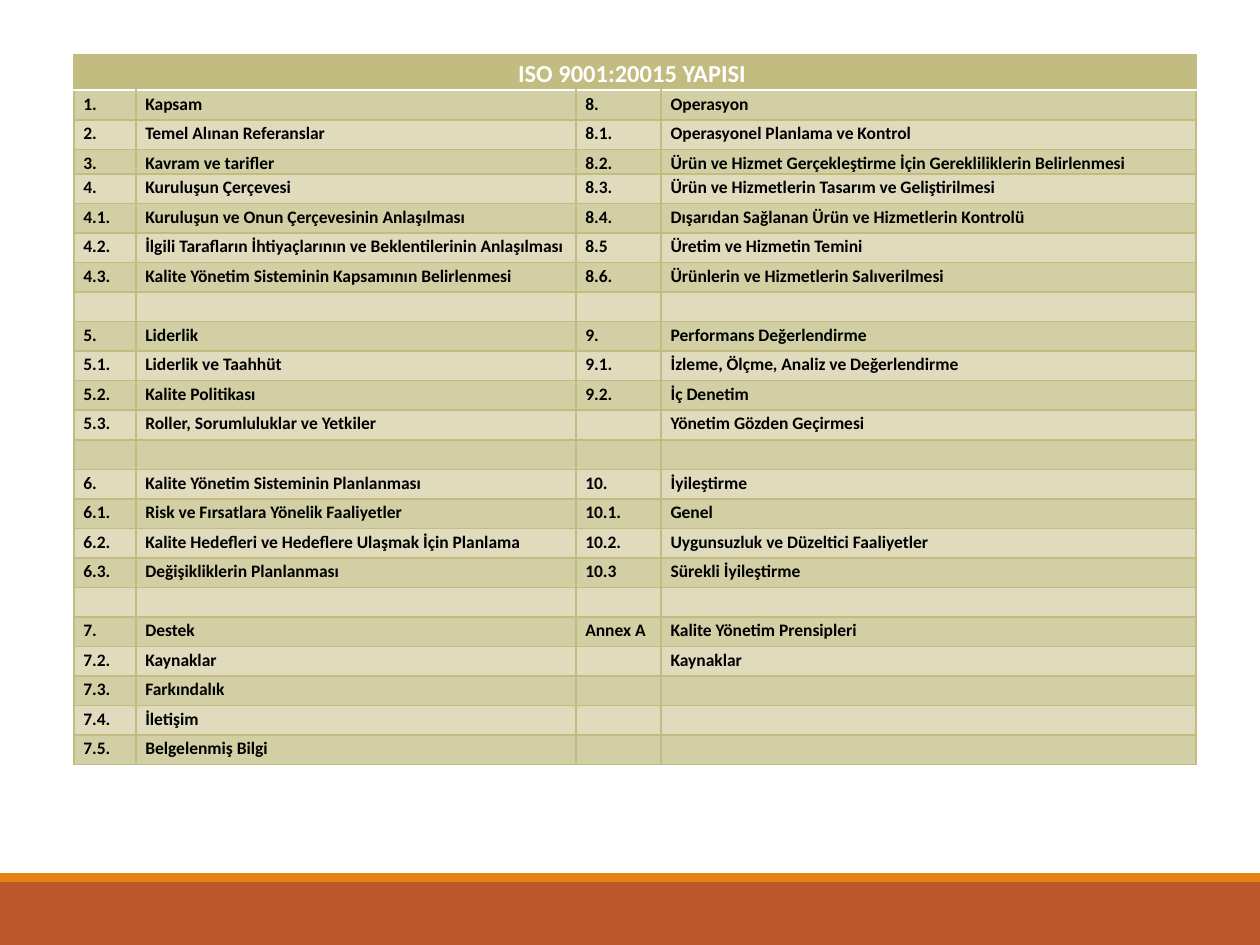
from dataclasses import dataclass

from lxml.etree import SubElement
from pptx import Presentation
from pptx.dml.color import RGBColor
from pptx.enum.shapes import MSO_SHAPE
from pptx.enum.text import PP_ALIGN
from pptx.oxml.ns import qn
from pptx.util import Cm, Pt


@dataclass(frozen=True)
class Theme:
    font: str = "Calibri"
    header_size: int = 14
    body_size: int = 10
    line_spacing: float = 1.15
    khaki: str = "C2BC80"
    dark_band: str = "D3CFA4"
    light_band: str = "E1DBBE"
    white: str = "FFFFFF"
    black: str = "000000"
    orange: str = "E48312"
    rust: str = "BD582C"


HEADING = "ISO 9001:20015 YAPISI "
CLAUSES = [
    ("1.", "Kapsam", "8.", "Operasyon"),
    ("2.", "Temel Alınan Referanslar", "8.1.", "Operasyonel Planlama ve Kontrol"),
    ("3.", "Kavram ve tarifler", "8.2.", "Ürün ve Hizmet Gerçekleştirme İçin Gerekliliklerin Belirlenmesi"),
    ("4.", "Kuruluşun Çerçevesi", "8.3.", "Ürün ve Hizmetlerin Tasarım ve Geliştirilmesi"),
    ("4.1.", "Kuruluşun ve Onun Çerçevesinin Anlaşılması", "8.4.", "Dışarıdan Sağlanan Ürün ve Hizmetlerin Kontrolü"),
    ("4.2.", "İlgili Tarafların İhtiyaçlarının ve Beklentilerinin Anlaşılması", "8.5", "Üretim ve Hizmetin Temini"),
    ("4.3.", "Kalite Yönetim Sisteminin Kapsamının Belirlenmesi", "8.6.", "Ürünlerin ve Hizmetlerin Salıverilmesi"),
    ("", "", "", ""),
    ("5.", "Liderlik", "9.", "Performans Değerlendirme"),
    ("5.1.", "Liderlik ve Taahhüt", "9.1.", "İzleme, Ölçme, Analiz ve Değerlendirme"),
    ("5.2.", "Kalite Politikası", "9.2.", "İç Denetim"),
    ("5.3.", "Roller, Sorumluluklar ve Yetkiler", "", "Yönetim Gözden Geçirmesi"),
    ("", "", "", ""),
    ("6.", "Kalite Yönetim Sisteminin Planlanması", "10.", "İyileştirme"),
    ("6.1.", "Risk ve Fırsatlara Yönelik Faaliyetler", "10.1.", "Genel"),
    ("6.2.", "Kalite Hedefleri ve Hedeflere Ulaşmak İçin Planlama", "10.2.", "Uygunsuzluk ve Düzeltici Faaliyetler"),
    ("6.3.", "Değişikliklerin Planlanması", "10.3", "Sürekli İyileştirme"),
    ("", "", "", ""),
    ("7.", "Destek", "Annex A", "Kalite Yönetim Prensipleri"),
    ("7.2.", "Kaynaklar", "", "Kaynaklar"),
    ("7.3.", "Farkındalık", "", ""),
    ("7.4.", "İletişim", "", ""),
    ("7.5.", "Belgelenmiş Bilgi", "", ""),
]
COLUMN_WIDTHS = (1.25, 8.87, 1.72, 10.78)
HEADER_HEIGHT = 0.71
SHORT_ROW = 3
SHORT_HEIGHT = 0.5
OTHER_ROWS_HEIGHT = 13.11


def write_text(paragraph, text, *, font, size, color, spacing, align=PP_ALIGN.LEFT):
    paragraph.alignment = align
    paragraph.line_spacing = spacing
    if not text:
        paragraph._p.get_or_add_endParaRPr().set("sz", str(size * 100))
        return
    span = paragraph.add_run()
    span.text = text
    span.font.name = font
    span.font.size = Pt(size)
    span.font.bold = True
    span.font.color.rgb = RGBColor.from_string(color)


class SlideBuilder:
    def __init__(self, page, theme):
        self.page = page
        self.theme = theme

    def band(self, left, top, width, height, color):
        box = self.page.shapes.add_shape(
            MSO_SHAPE.RECTANGLE, Cm(left), Cm(top), Cm(width), Cm(height)
        )
        box.shadow.inherit = False
        box.fill.solid()
        box.fill.fore_color.rgb = RGBColor.from_string(color)
        box.line.fill.background()

    def border(self, cell, side, color, width):
        line = SubElement(cell._tc.get_or_add_tcPr(), qn(f"a:ln{side}"), w=str(Pt(width)))
        fill = SubElement(line, qn("a:solidFill"))
        SubElement(fill, qn("a:srgbClr"), val=color)

    def cell(self, cell, text, fill, **borders):
        for side in "LRTB":
            self.border(cell, side, *borders.get(side, (self.theme.khaki, 1)))
        cell.fill.solid()
        cell.fill.fore_color.rgb = RGBColor.from_string(fill)
        cell.margin_left = cell.margin_right = Cm(0.19)
        cell.margin_top = cell.margin_bottom = 0
        if text is not None:
            is_header = fill == self.theme.khaki
            write_text(
                cell.text_frame.paragraphs[0],
                text,
                font=self.theme.font,
                size=self.theme.header_size if is_header else self.theme.body_size,
                color=self.theme.white if is_header else self.theme.black,
                spacing=self.theme.line_spacing,
                align=PP_ALIGN.CENTER if is_header else PP_ALIGN.LEFT,
            )

    def clause_table(self, left, top, heading, clauses):
        theme = self.theme
        row_height = OTHER_ROWS_HEIGHT / (len(clauses) - 1)
        heights = [HEADER_HEIGHT] + [row_height] * len(clauses)
        heights[SHORT_ROW] = SHORT_HEIGHT
        table = self.page.shapes.add_table(
            len(heights), len(COLUMN_WIDTHS), Cm(left), Cm(top),
            Cm(sum(COLUMN_WIDTHS)), Cm(sum(heights)),
        ).table
        for column, width in zip(table.columns, COLUMN_WIDTHS):
            column.width = Cm(width)
        for row, height in zip(table.rows, heights):
            row.height = Cm(height)

        divider = (theme.white, 1.25)
        table.cell(0, 0).merge(table.cell(0, len(COLUMN_WIDTHS) - 1))
        for index, cell in enumerate(table.rows[0].cells):
            self.cell(cell, None if index else heading, theme.khaki, B=divider)
        for number, clause in enumerate(clauses, start=1):
            fill = theme.dark_band if number % 2 else theme.light_band
            borders = {"T": divider} if number == 1 else {}
            for cell, text in zip(table.rows[number].cells, clause):
                self.cell(cell, text, fill, **borders)


def main():
    deck = Presentation()
    deck.slide_width, deck.slide_height = Cm(25.4), Cm(19.05)
    theme = Theme()
    builder = SlideBuilder(deck.slides.add_slide(deck.slide_layouts[6]), theme)
    builder.band(0, 17.78, 25.4, 1.27, theme.rust)
    builder.band(0, 17.6, 25.4, 0.18, theme.orange)
    builder.clause_table(1.49, 1.11, HEADING, CLAUSES)
    deck.save("out.pptx")


if __name__ == "__main__":
    main()
